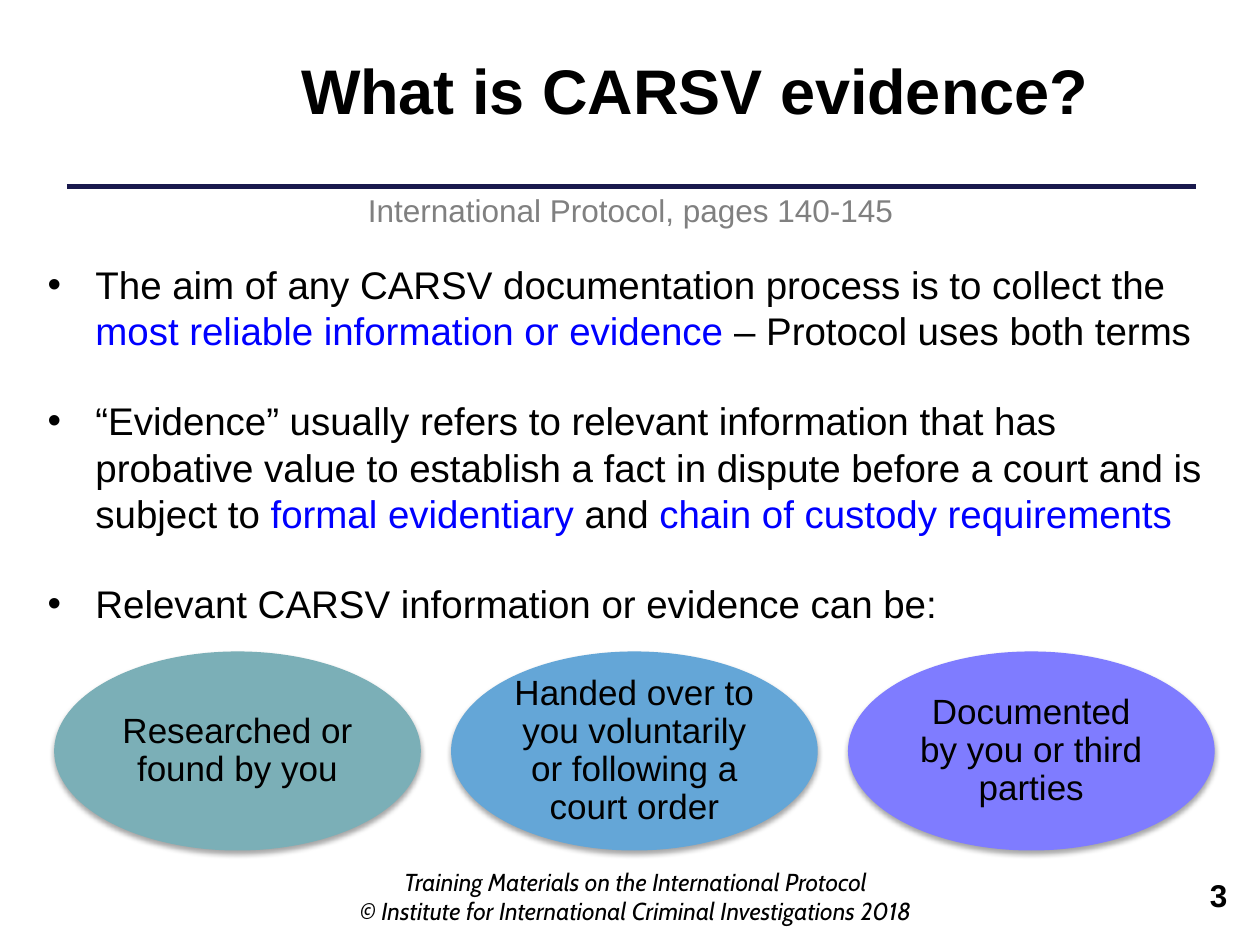
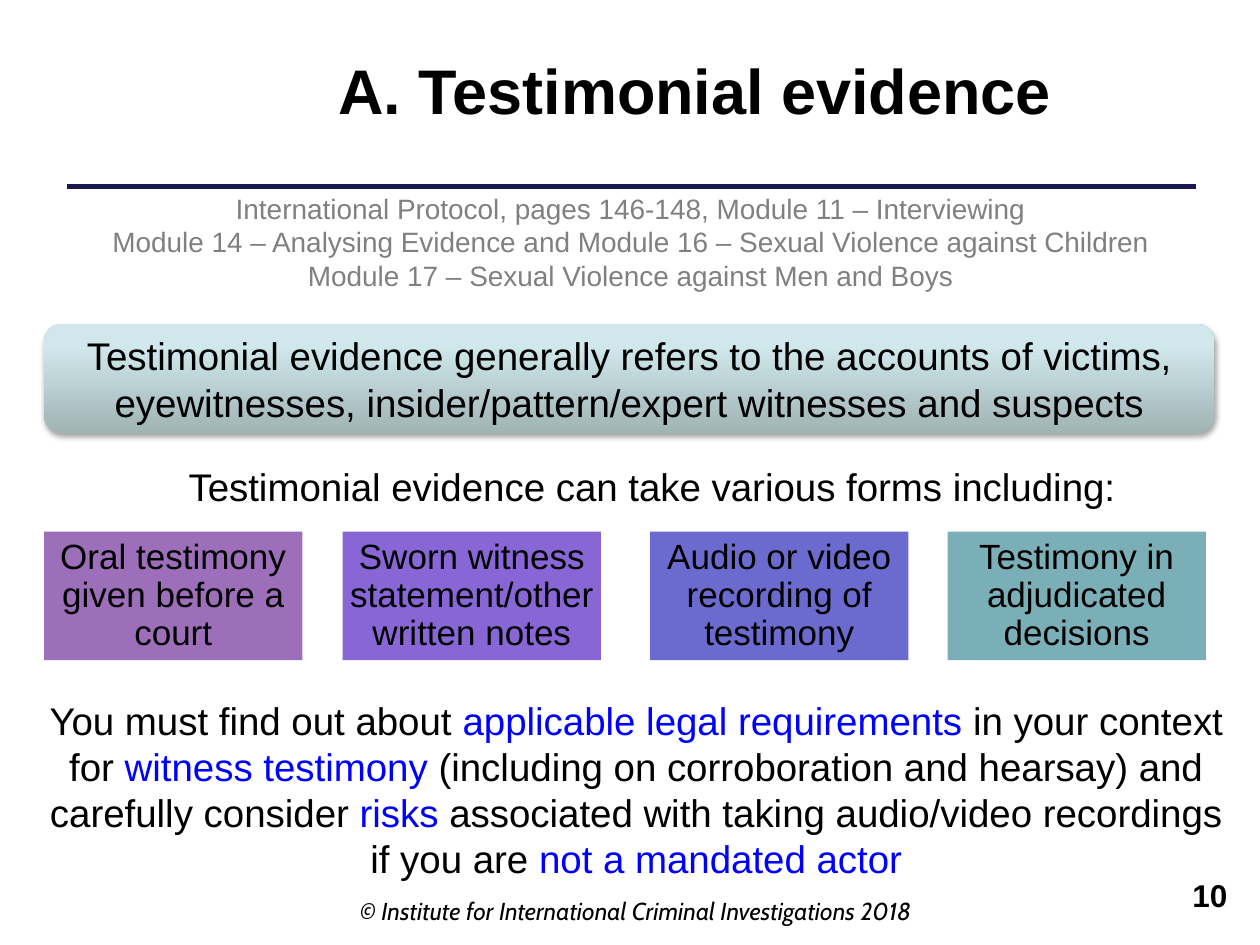
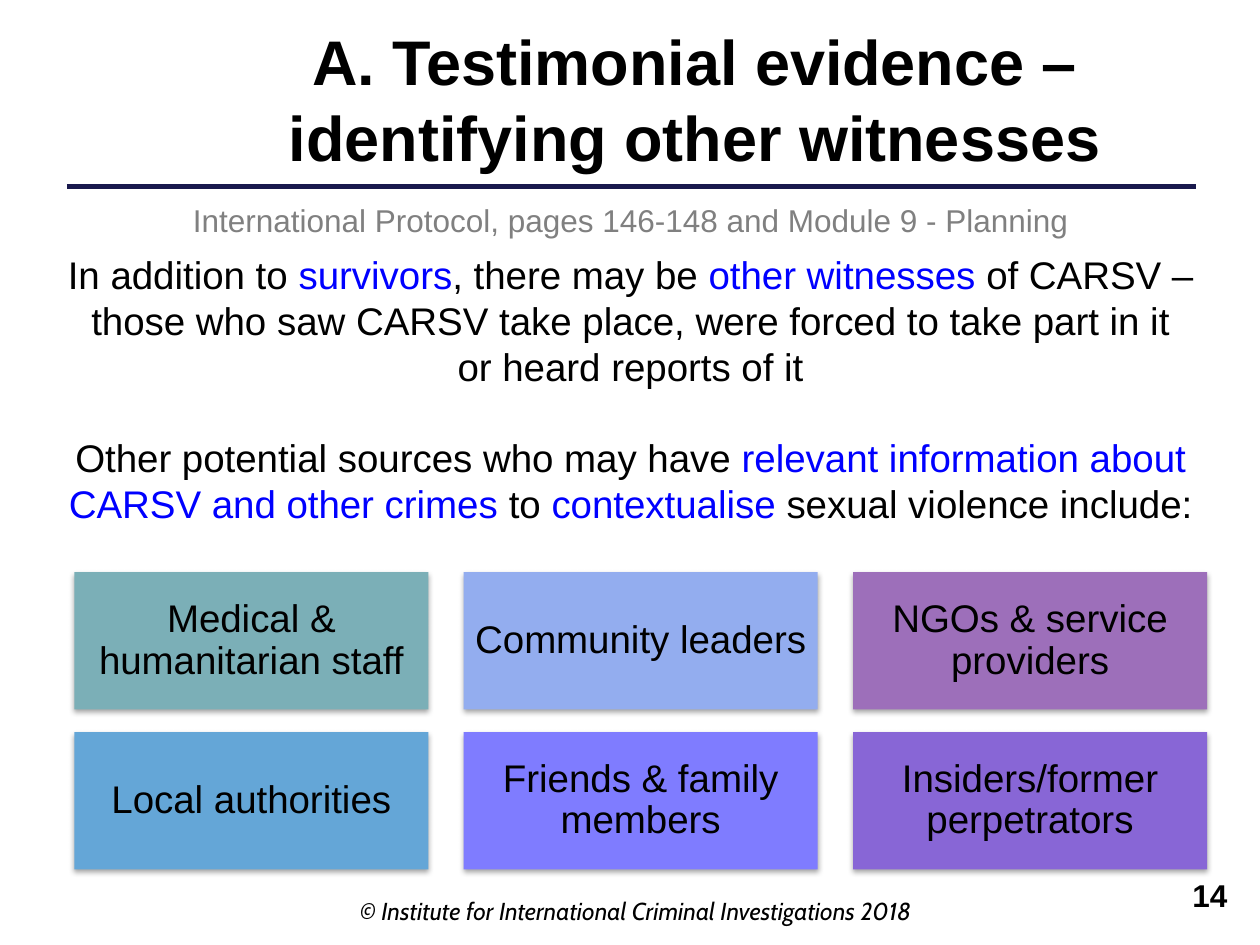
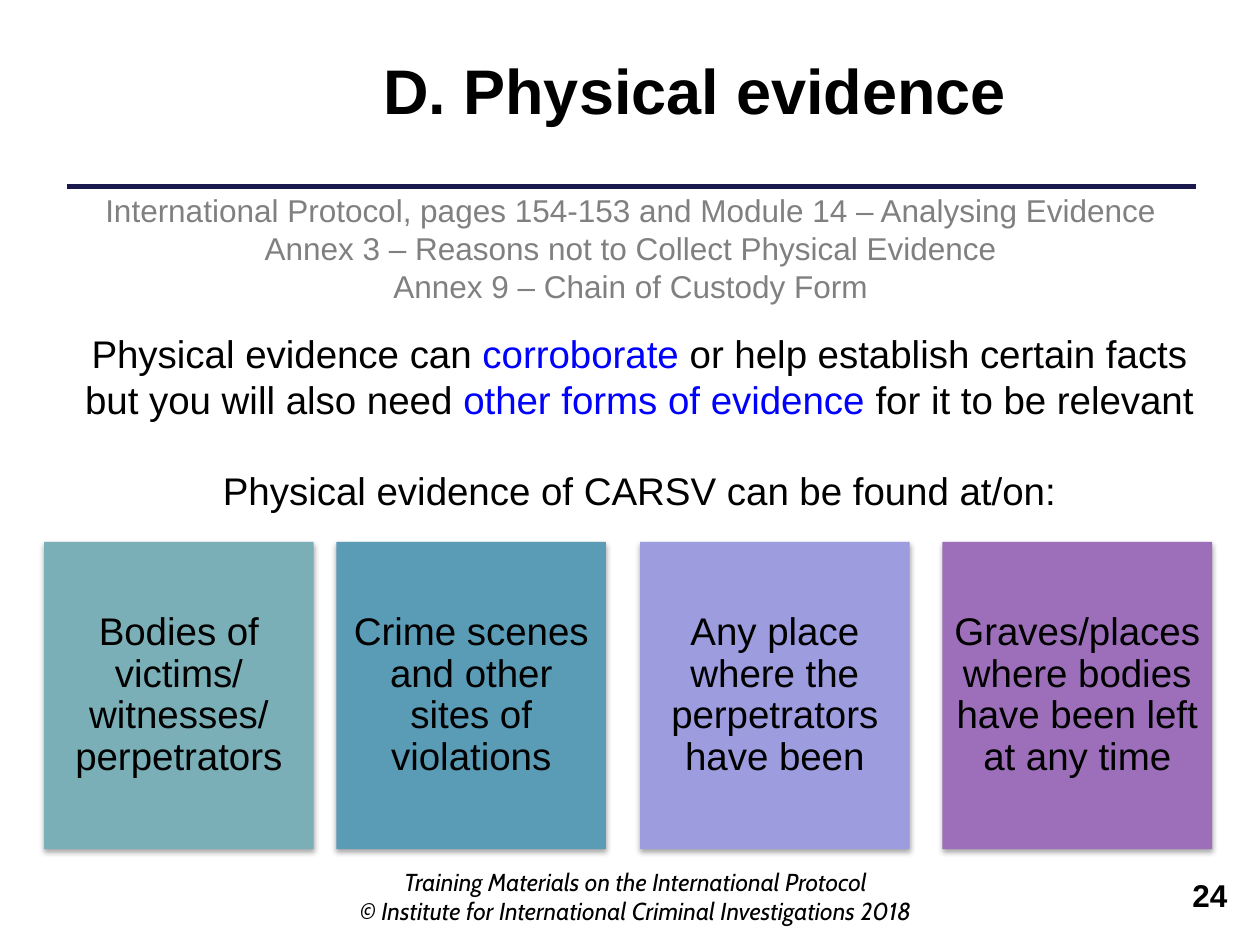
from lxml import etree
from pptx import Presentation
from pptx import util as u
from pptx.dml.color import RGBColor
from pptx.enum import shapes, text
from pptx.oxml.ns import qn

BLACK, BLUE, GREY, NAVY = "000000", "0000FF", "808080", "19194D"
TEAL, SKY, VIOLET = "7BAFB7", "64A6D7", "7F7CFF"
MAUVE, PURPLE, INDIGO = "9D6FBA", "8866D6", "6B6BCF"
PERIWINKLE, LAVENDER, OCEAN = "93ADEF", "9C9CDF", "5A9BB5"

CENTER, RIGHT, LEFT = text.PP_ALIGN.CENTER, text.PP_ALIGN.RIGHT, text.PP_ALIGN.LEFT
MIDDLE, TOP = text.MSO_ANCHOR.MIDDLE, text.MSO_ANCHOR.TOP
BODY_SIZE = 22
LINE_GAP = 25.3  # one line of body text, in points

TRAINING = "Training Materials on the International Protocol"
COPYRIGHT = "© Institute for International Criminal Investigations 2018"


def rgb(value):
    return RGBColor.from_string(value)


def inches(*lengths):
    return [u.Inches(length) for length in lengths]


def add_bullet(paragraph):
    properties = paragraph._p.get_or_add_pPr()
    properties.set("marL", str(u.Inches(0.38)))
    properties.set("indent", str(u.Inches(-0.38)))
    etree.SubElement(properties, qn("a:buFont")).set("typeface", "Arial")
    etree.SubElement(properties, qn("a:buChar")).set("char", "•")


def write(frame, paragraphs, size=BODY_SIZE, color=BLACK, align=CENTER, font="Arial",
          bold=False, italic=False, bullets=False, spaced=(), line_spacing=None):
    """Fill a frame; *starred* words turn blue, `spaced` paragraphs get a gap above."""
    frame.word_wrap = True
    for index, content in enumerate(paragraphs):
        paragraph = frame.add_paragraph() if index else frame.paragraphs[0]
        if bullets:
            add_bullet(paragraph)
        paragraph.alignment = align
        if line_spacing:
            paragraph.line_spacing = line_spacing
        if index in spaced:
            paragraph.space_before = u.Pt(LINE_GAP)
        for part, words in enumerate(content.split("*")):
            if not words:
                continue
            run = paragraph.add_run()
            run.text = words
            run.font.name = font
            run.font.size = u.Pt(size)
            run.font.bold = bold
            run.font.italic = italic
            run.font.color.rgb = rgb(BLUE if part % 2 else color)


def add_text(slide, box, paragraphs, anchor=TOP, **style):
    frame = slide.shapes.add_textbox(*inches(*box)).text_frame
    frame.vertical_anchor = anchor
    write(frame, paragraphs, **style)


def add_effects(shape, shadow=False):
    """Give a shape an own effect list, empty or with a soft shadow below."""
    shape.shadow.inherit = False
    if not shadow:
        return
    effects = shape._element.spPr.find(qn("a:effectLst"))
    outer = etree.SubElement(effects, qn("a:outerShdw"), blurRad=str(u.Pt(3.1)),
                             dist=str(u.Pt(1.8)), dir="5400000", rotWithShape="0")
    tone = etree.SubElement(outer, qn("a:srgbClr"), val=BLACK)
    etree.SubElement(tone, qn("a:alpha"), val="35000")


def add_card(slide, kind, box, label, fill, size=BODY_SIZE, margins=(0.08, 0.08),
             shadow=True, line_spacing=0.9):
    card = slide.shapes.add_shape(kind, *inches(*box))
    add_effects(card, shadow)
    card.line.fill.background()
    if fill:
        card.fill.solid()
        card.fill.fore_color.rgb = rgb(fill)
    frame = card.text_frame
    frame.margin_left = frame.margin_right = u.Inches(margins[0])
    frame.margin_top = frame.margin_bottom = u.Inches(margins[1])
    frame.vertical_anchor = MIDDLE
    write(frame, [label], size=size, line_spacing=line_spacing)
    return card


def add_rule(slide):
    rule = slide.shapes.add_connector(
        shapes.MSO_CONNECTOR.STRAIGHT, *inches(0.53, 1.48, 9.49, 1.48))
    rule.line.color.rgb = rgb(NAVY)
    rule.line.width = u.Pt(2.5)
    etree.SubElement(rule._element.spPr, qn("a:effectLst"))


def start_slide(deck, title, number, references, footer=(COPYRIGHT,), title_box=(0.36, 0.71),
                reference_top=1.47, reference_size=18):
    """Add a slide with title, rule, page references, footer and page number."""
    slide = deck.slides.add_slide(deck.slide_layouts[5])
    heading = slide.shapes.title
    top, height = title_box
    heading.left, heading.top, heading.width, heading.height = inches(1.38, top, 8.27, height)
    heading.text_frame.auto_size = text.MSO_AUTO_SIZE.NONE
    heading.text_frame.vertical_anchor = TOP
    write(heading.text_frame, [title], size=36, bold=True)
    add_rule(slide)
    add_text(slide, (0.28, reference_top, 9.45, 0.1 + 0.3 * len(references)), references,
             size=reference_size, color=GREY)
    footer_height = 0.23 * len(footer)
    add_text(slide, (2.72, 7.29 - footer_height, 4.65, footer_height + 0.06), footer,
             size=14, font="Cabin", italic=True)
    add_text(slide, (7.28, 6.9, 2.56, 0.52), [str(number)], size=18, bold=True, align=RIGHT)
    return slide


def evidence_slide(deck):
    slide = start_slide(deck, "What is CARSV evidence?", 3,
                        ["International Protocol, pages 140-145"], (TRAINING, COPYRIGHT))
    add_text(slide, (0.28, 2.02, 9.53, 3.1), [
        "The aim of any CARSV documentation process is to collect the "
        "*most reliable information or evidence *– Protocol uses both terms",
        "“Evidence” usually refers to relevant information that has probative value to "
        "establish a fact in dispute before a court and is subject to "
        "*formal evidentiary* and *chain of custody requirements*",
        "Relevant CARSV information or evidence can be:",
    ], align=LEFT, bullets=True, spaced=(1, 2))
    origins = [("Researched or found by you", TEAL),
               ("Handed over to you voluntarily or following a court order", SKY),
               ("Documented by you or third parties", VIOLET)]
    for column, (origin, fill) in enumerate(origins):
        add_card(slide, shapes.MSO_SHAPE.OVAL, (0.43 + 3.15 * column, 5.17, 2.91, 1.58),
                 origin, fill, size=20, margins=(0.07, 0.09))


def testimony_slide(deck):
    slide = start_slide(deck, "A. Testimonial evidence", 10, [
        "International Protocol, pages 146-148, Module 11 – Interviewing",
        "Module 14 – Analysing Evidence and Module 16 – Sexual Violence against Children",
        "Module 17 – Sexual Violence against Men and Boys",
    ], reference_size=16)
    definition = add_card(
        slide, shapes.MSO_SHAPE.FLOWCHART_ALTERNATE_PROCESS, (0.35, 2.57, 9.29, 0.87),
        "Testimonial evidence generally refers to the accounts of victims, "
        "eyewitnesses, insider/pattern/expert witnesses and suspects",
        None, margins=(0.1, 0.05), line_spacing=None)
    definition.fill.gradient()
    definition.fill.gradient_angle = 90
    for stop, (position, tone) in zip(definition.fill.gradient_stops,
                                      [(0, "A0B3B5"), (0.8, "D0E8EB")]):
        stop.position = position
        stop.color.rgb = rgb(tone)
    add_text(slide, (0.35, 3.59, 9.65, 0.53),
             ["Testimonial evidence can take various forms including:"], anchor=MIDDLE)
    forms = [(0.35, "Oral testimony given before a court", MAUVE),
             (2.72, "Sworn witness statement/other written notes", PURPLE),
             (5.16, "Audio or video recording of testimony", INDIGO),
             (7.52, "Testimony in adjudicated decisions", TEAL)]
    for left, form, fill in forms:
        add_card(slide, shapes.MSO_SHAPE.RECTANGLE, (left, 4.22, 2.05, 1.02), form, fill,
                 size=20, margins=(0.04, 0.04), shadow=False)
    add_text(slide, (0.28, 5.48, 9.54, 1.58), [
        "You must find out about *applicable legal requirements *in your context for "
        "*witness testimony *(including on corroboration and hearsay) and carefully "
        "consider *risks* associated with taking audio/video recordings if you are "
        "*not a mandated actor*"])


def witnesses_slide(deck):
    slide = start_slide(deck, "A. Testimonial evidence – identifying other witnesses", 14,
                        ["International Protocol, pages 146-148 and Module 9 - Planning"],
                        title_box=(0.13, 1.31), reference_top=1.55)
    add_text(slide, (0.2, 1.94, 9.61, 2.32), [
        "In addition to *survivors*, there may be *other witnesses *of CARSV – "
        "those who saw CARSV take place, were forced to take part in it",
        "or heard reports of it",
        "Other potential sources who may have *relevant information about CARSV and "
        "other crimes* to *contextualise* sexual violence include:",
    ], spaced=(2,))
    sources = [("Medical & humanitarian staff", TEAL), ("Community leaders", PERIWINKLE),
               ("NGOs & service providers", MAUVE), ("Local authorities", SKY),
               ("Friends & family members", VIOLET), ("Insiders/former perpetrators", PURPLE)]
    for index, (source, fill) in enumerate(sources):
        row, column = divmod(index, 3)
        add_card(slide, shapes.MSO_SHAPE.RECTANGLE,
                 (0.59 + 3.09 * column, 4.54 + 1.27 * row, 2.81, 1.09), source, fill)


def physical_slide(deck):
    slide = start_slide(deck, "D. Physical evidence", 24, [
        "International Protocol, pages 154-153 and Module 14 – Analysing Evidence",
        "Annex 3 – Reasons not to Collect Physical Evidence",
        "Annex 9 – Chain of Custody Form",
    ], (TRAINING, COPYRIGHT))
    places = [(0.35, "Bodies of victims/ witnesses/ perpetrators", TEAL),
              (2.67, "Crime scenes and other sites of violations", OCEAN),
              (5.08, "Any place where the perpetrators have been", LAVENDER),
              (7.48, "Graves/places where bodies have been left at any time", MAUVE)]
    for left, place, fill in places:
        add_card(slide, shapes.MSO_SHAPE.RECTANGLE, (left, 4.3, 2.14, 2.44), place, fill)
    add_text(slide, (0.43, 2.57, 9.29, 1.6), [
        "Physical evidence can *corroborate* or help establish certain facts but you "
        "will also need *other forms of evidence *for it to be relevant",
        "Physical evidence of CARSV can be found at/on:",
    ], spaced=(1,))


def main():
    deck = Presentation()
    deck.slide_width, deck.slide_height = inches(10, 7.5)
    evidence_slide(deck)
    testimony_slide(deck)
    witnesses_slide(deck)
    physical_slide(deck)
    deck.save("out.pptx")


if __name__ == "__main__":
    main()
